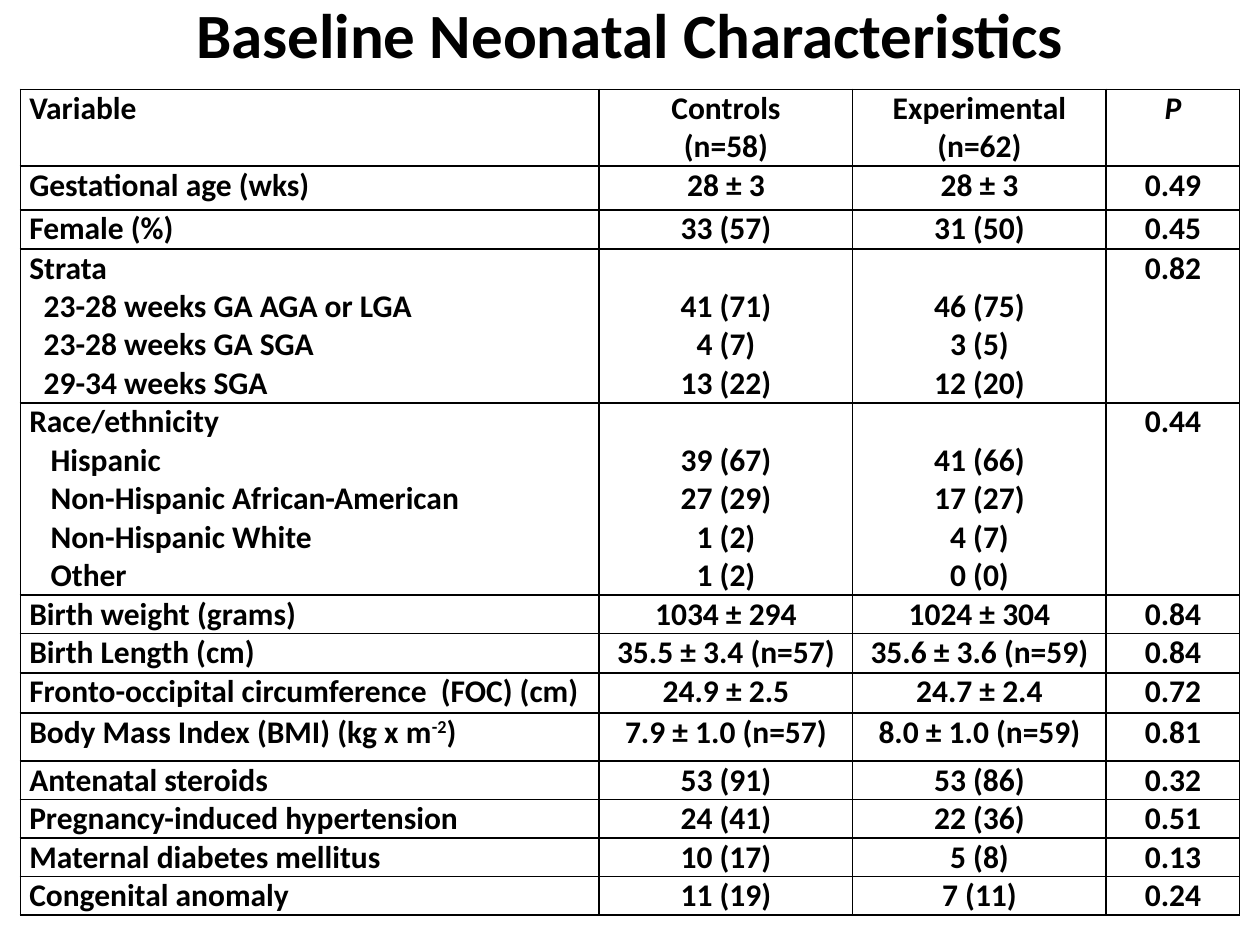
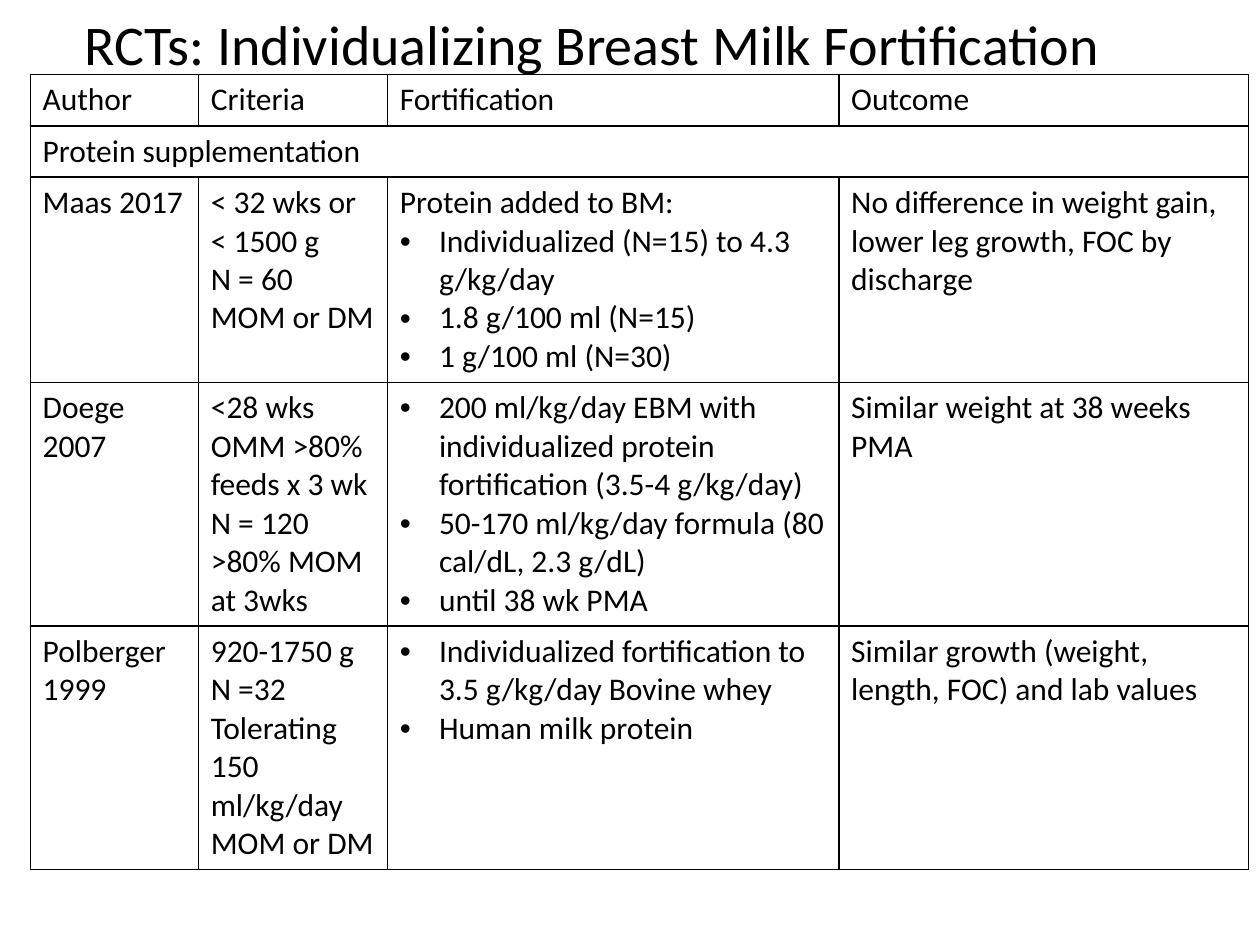
import pptx
import pptx.dml.color
import pptx.enum.text
import pptx.oxml
import pptx.oxml.ns
import pptx.util

Cm, Pt = pptx.util.Cm, pptx.util.Pt
ALIGN = pptx.enum.text.PP_ALIGN
BLACK = pptx.dml.color.RGBColor(0, 0, 0)
FONT = "Calibri"
LINE_HEIGHT = 0.77  # one 18 pt line, in cm
BULLET_INDENT = 0.79


def indented(indent, *texts):
    return [{"text": text, "left": indent} for text in texts]


def bullets(*texts):
    return [{"text": text, "left": BULLET_INDENT, "bullet": True} for text in texts]


# Content: a cell is a string or a list of paragraphs; ^ marks a superscript
BASELINE = {
    "title": "Baseline Neonatal Characteristics",
    "title_box": (0, -1.07, 25.4, 3.68),
    "title_format": {"size": Pt(36), "bold": True},
    "title_align": ALIGN.CENTER,
    "table_at": (0.41, 1.8),
    "columns": (11.67, 5.11, 5.11, 2.69),
    "heights": (0.97, 0.88, 0.79, 2.87, 3.61, 0.71, 0.79, 0.81, 0.97,
                0.69, 0.74, 0.69, 0.71),
    "margins": (0.18, 0),
    "bold": True,
    "value_align": ALIGN.CENTER,
    "italic_cells": {(0, 3)},
    "lowered_cells": {(row, column) for row in (3, 4) for column in (1, 2)},
    "merged_rows": (),
    "rows": [
        ("Variable", ["Controls", "(n=58)"], "Experimental (n=62)", "P"),
        ("Gestational age (wks)", "28 ± 3", "28 ± 3", "0.49"),
        ("Female (%)", "33 (57)", "31 (50)", "0.45"),
        (["Strata", *indented(0.29, "23-28 weeks GA AGA or LGA",
                              "23-28 weeks GA SGA", "29-34 weeks SGA")],
         ["41 (71)", "4 (7)", "13 (22)"],
         ["46 (75)", "3 (5)", "12 (20)"], "0.82"),
        (["Race/ethnicity", *indented(0.43, "Hispanic",
                                      "Non-Hispanic African-American",
                                      "Non-Hispanic White", "Other")],
         ["39 (67)", "27 (29)", "1 (2)", "1 (2)"],
         ["41 (66)", "17 (27)", "4 (7)", "0 (0)"], "0.44"),
        ("Birth weight (grams)", "1034 ± 294", "1024 ± 304", "0.84"),
        ("Birth Length (cm)", "35.5 ± 3.4 (n=57)", "35.6 ± 3.6 (n=59)", "0.84"),
        ("Fronto-occipital circumference  (FOC) (cm)",
         "24.9 ± 2.5", "24.7 ± 2.4", "0.72"),
        ("Body Mass Index (BMI) (kg x m^-2^)",
         "7.9 ± 1.0 (n=57)", "8.0 ± 1.0 (n=59)", "0.81"),
        ("Antenatal steroids", "53 (91)", "53 (86)", "0.32"),
        ("Pregnancy-induced hypertension", "24 (41)", "22 (36)", "0.51"),
        ("Maternal diabetes mellitus", "10 (17)", "5 (8)", "0.13"),
        ("Congenital anomaly", "11 (19)", "7 (11)", "0.24"),
    ],
}

FORTIFICATION = {
    "title": "RCTs: Individualizing Breast Milk Fortification",
    "title_box": (1.45, -0.64, 22.86, 3.18),
    "title_format": {"size": Pt(32), "bold": False},
    "title_align": ALIGN.LEFT,
    "table_at": (0.61, 1.5),
    "columns": (3.39, 3.81, 9.1, 8.26),
    "heights": (0.84, 0.74, 1.04, 1.04, 1.04),
    "margins": (0.25, 0.13),
    "bold": False,
    "value_align": ALIGN.LEFT,
    "italic_cells": (),
    "lowered_cells": (),
    "merged_rows": (1,),
    "rows": [
        ("Author", "Criteria", "Fortification", "Outcome"),
        ("Protein supplementation",),
        ("Maas 2017",
         ["< 32 wks or", "< 1500 g", "N = 60", "MOM or DM"],
         ["Protein added to BM:",
          *bullets("Individualized (N=15) to 4.3 g/kg/day",
                   "1.8 g/100 ml (N=15)", "1 g/100 ml (N=30)")],
         "No difference in weight gain, lower leg growth, FOC by discharge"),
        ("Doege 2007",
         ["<28 wks", "OMM >80% feeds x 3 wk", "N = 120", ">80% MOM at 3wks"],
         bullets("200 ml/kg/day EBM with individualized protein "
                 "fortification (3.5-4 g/kg/day)",
                 "50-170 ml/kg/day formula (80 cal/dL, 2.3 g/dL)",
                 "until 38 wk PMA"),
         "Similar weight at 38 weeks PMA"),
        ("Polberger 1999",
         ["920-1750 g", "N =32", "Tolerating 150 ml/kg/day MOM or DM"],
         bullets("Individualized fortification to 3.5 g/kg/day Bovine whey",
                 "Human milk protein"),
         "Similar growth (weight, length, FOC) and lab values"),
    ],
}


def set_values(target, values):
    for name, value in values.items():
        setattr(target, name, value)


def drawing_element(tag, body=""):
    return pptx.oxml.parse_xml(
        f'<a:{tag} {pptx.oxml.ns.nsdecls("a")}>{body}</a:{tag}>')


def add_span(para, text, values):
    span = para.add_run()
    span.text = text
    set_values(span.font, {"name": FONT, **values})
    span.font.color.rgb = BLACK
    return span


def write_para(para, item, align, values):
    entry = item if isinstance(item, dict) else {"text": item}
    para.alignment = align
    # Spans between ^ marks are raised
    for index, text in enumerate(entry["text"].split("^")):
        span = add_span(para, text, values)
        if index % 2:
            span.font._element.set("baseline", "30000")
    if "left" in entry:
        properties = para._p.get_or_add_pPr()
        properties.set("marL", str(Cm(entry["left"])))
        if entry.get("bullet"):
            properties.set("indent", str(-Cm(entry["left"])))
            properties.append(drawing_element("buFont"))
            properties[-1].set("typeface", "Arial")
            properties.append(drawing_element("buChar"))
            properties[-1].set("char", "•")


def style_cell(cell, margins):
    side, vertical = map(Cm, margins)
    set_values(cell, {"margin_left": side, "margin_right": side,
                      "margin_top": vertical, "margin_bottom": vertical})
    cell.fill.background()
    properties = cell._tc.get_or_add_tcPr()
    for index, edge in enumerate(("lnL", "lnR", "lnT", "lnB")):
        line = drawing_element(
            edge, f'<a:solidFill><a:srgbClr val="{BLACK}"/></a:solidFill>')
        line.set("w", str(Pt(1)))
        properties.insert(index, line)


def add_title(page, content):
    title = page.shapes.title
    set_values(title, dict(zip(("left", "top", "width", "height"),
                               map(Cm, content["title_box"]))))
    set_values(title.text_frame, {
        "word_wrap": True,
        "auto_size": pptx.enum.text.MSO_AUTO_SIZE.NONE,
        "vertical_anchor": pptx.enum.text.MSO_ANCHOR.MIDDLE})
    para = title.text_frame.paragraphs[0]
    set_values(para, {"alignment": content["title_align"], "line_spacing": 0.9})
    add_span(para, content["title"], content["title_format"])


def add_grid(page, content):
    rows, widths, heights = content["rows"], content["columns"], content["heights"]
    left, top = content["table_at"]
    table = page.shapes.add_table(
        len(rows), len(widths), Cm(left), Cm(top),
        Cm(sum(widths)), Cm(sum(heights))).table
    set_values(table, {"first_row": False, "horz_banding": False})
    for column, width in zip(table.columns, widths):
        column.width = Cm(width)
    for row, height in zip(table.rows, heights):
        row.height = Cm(height)
    for cell in table.iter_cells():
        style_cell(cell, content["margins"])
    for row in content["merged_rows"]:
        table.cell(row, 0).merge(table.cell(row, len(widths) - 1))

    # Cell text
    for row, entries in enumerate(rows):
        for column, entry in enumerate(entries):
            place, cell = (row, column), table.cell(row, column)
            if place in content["lowered_cells"]:
                cell.margin_top = Cm(LINE_HEIGHT)
            values = {"size": Pt(18), "bold": content["bold"],
                      "italic": place in content["italic_cells"]}
            align = content["value_align"] if column else ALIGN.LEFT
            frame = cell.text_frame
            items = entry if isinstance(entry, list) else [entry]
            for index, item in enumerate(items):
                para = frame.add_paragraph() if index else frame.paragraphs[0]
                write_para(para, item, align, values)


def main():
    deck = pptx.Presentation()
    deck.slide_width, deck.slide_height = Cm(25.4), Cm(19.05)
    title_only = deck.slide_layouts.get_by_name("Title Only")
    for content in (BASELINE, FORTIFICATION):
        page = deck.slides.add_slide(title_only)
        add_title(page, content)
        add_grid(page, content)
    deck.save("out.pptx")


if __name__ == "__main__":
    main()
